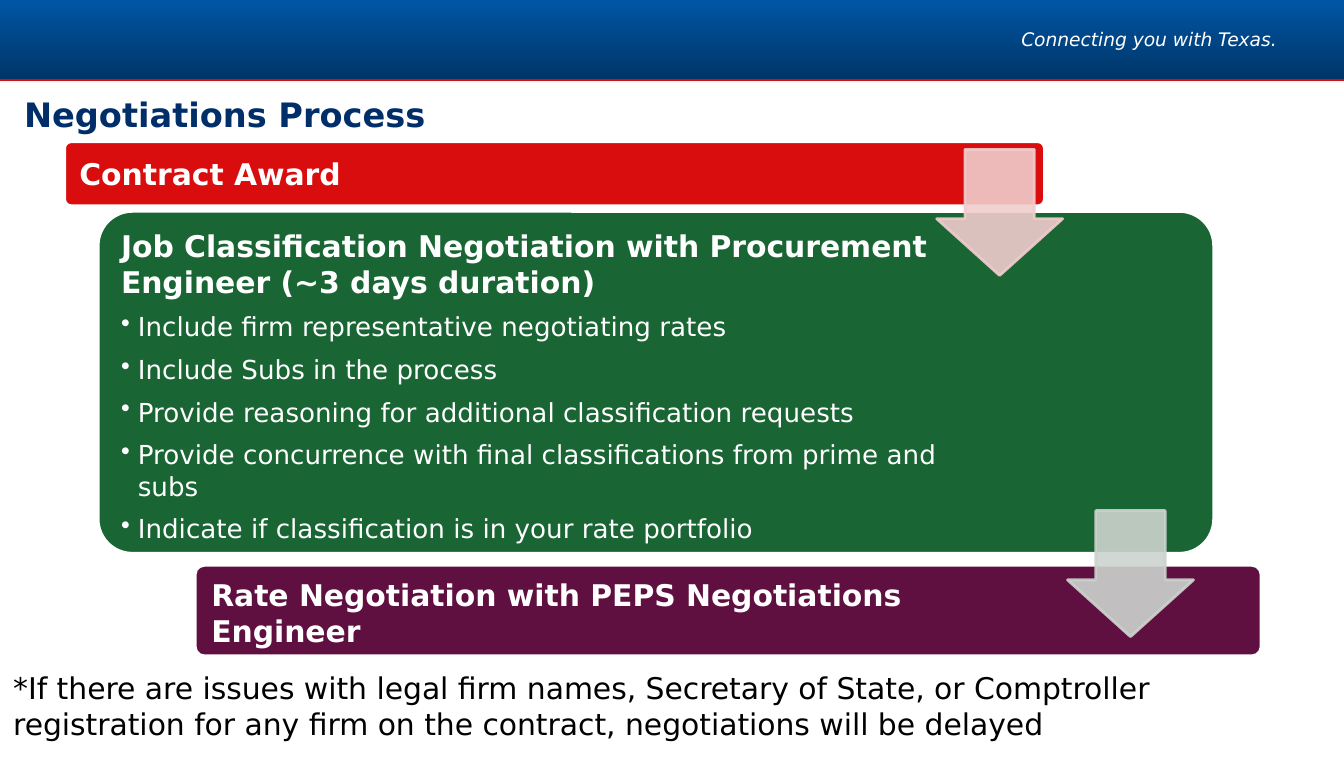
from dataclasses import dataclass

from pptx import Presentation
from pptx.dml.color import RGBColor
from pptx.enum.shapes import MSO_CONNECTOR, MSO_SHAPE
from pptx.enum.text import MSO_ANCHOR, PP_ALIGN
from pptx.oxml.ns import qn
from pptx.oxml.xmlchemy import OxmlElement
from pptx.util import Pt

RECT, ROUND, DOWN = MSO_SHAPE.RECTANGLE, MSO_SHAPE.ROUNDED_RECTANGLE, MSO_SHAPE.DOWN_ARROW
TOP, MIDDLE = MSO_ANCHOR.TOP, MSO_ANCHOR.MIDDLE
LEFT, RIGHT = PP_ALIGN.LEFT, PP_ALIGN.RIGHT
STRAIGHT = MSO_CONNECTOR.STRAIGHT

FONT = "DejaVu Sans"
HEX = {
    "white": "FFFFFF", "black": "000000", "navy": "002E69",
    "sky": "0057A8", "deep": "003567", "red": "D90D0D",
    "green": "196533", "plum": "5F0F40", "pink": "F1CCCC", "gray": "CCD3CE",
}
WIDTH, HEIGHT = 720, 405.36
CURVE = 0.1  # corner radius of a step, as a share of its height
INNER = 0.29 * CURVE  # extra text inset that the rounded corners cause
ARROW = 67.5


@dataclass
class Step:
    box: tuple
    color: str
    inset: tuple
    head: str
    items: tuple = ()
    anchor: int = MIDDLE


@dataclass
class Arrow:
    left: float
    top: float
    color: str


@dataclass
class Label:
    box: tuple
    text: str
    size: float
    color: str
    bold: bool = False
    italic: bool = False
    align: int = LEFT
    anchor: int = TOP
    inset: tuple = (7.2, 3.6, 7.2, 3.6)
    wrap: bool = True
    space: float = 1


STEPS = [
    Step((34.6, 75.9, 524.9, 34.3), "red", (7.9, 7.9, 107.3, 7.9), "Contract Award"),
    Step((52.6, 113.2, 597.6, 183.1), "green", (12.2, 8.7, 134.6, 8.7),
         "Job Classification Negotiation with Procurement Engineer (~3 days duration)",
         ("Include firm representative negotiating rates",
          "Include Subs in the process",
          "Provide reasoning for additional classification requests",
          "Provide concurrence with final classifications from prime and subs",
          "Indicate if classification is in your rate portfolio"), TOP),
    Step((104.6, 302.7, 571, 48.5), "plum", (8.6, 8.6, 125.3, 6.5),
         "Rate Negotiation with PEPS Negotiations Engineer"),
]
ARROWS = [Arrow(501.8, 80, "pink"), Arrow(571.9, 273.4, "gray")]
LABELS = [
    Label((516.2, 0, 167.8, 43.2), "Connecting you with Texas.", 10, "white",
          italic=True, align=RIGHT, anchor=MIDDLE, inset=(0, 0, 0, 0),
          wrap=False, space=0.9),
    Label((5.8, 46.8, 361.4, 28.8), "Negotiations Process", 18, "navy", bold=True),
    Label((0, 355, 669.6, 65.5),
          "*If there are issues with legal firm names, Secretary of State, or Comptroller "
          "registration for any firm on the contract, negotiations will be delayed",
          16, "black"),
]


def rgb(name: str) -> RGBColor:
    return RGBColor.from_string(HEX[name])


def style(par, size: float, color: str, bold=False, italic=False) -> None:
    for run in par.runs:
        font = run.font
        font.name, font.size = FONT, Pt(size)
        font.bold, font.italic = bold, italic
        font.color.rgb = rgb(color)


def frame(shape, inset: tuple, anchor: int, wrap=True):
    """Set insets, anchor and wrap; give back the text frame."""
    text = shape.text_frame
    (text.margin_left, text.margin_top,
     text.margin_right, text.margin_bottom) = (Pt(side) for side in inset)
    text.vertical_anchor, text.word_wrap = anchor, wrap
    return text


def bullet(par) -> None:
    props = par._p.get_or_add_pPr()
    props.set("marL", str(Pt(9)))
    props.set("indent", str(-Pt(9)))
    mark = OxmlElement("a:buChar")
    mark.set("char", "•")
    props.append(mark)


def add_shape(slide, kind: int, box: tuple, fill: str, line: str):
    shape = slide.shapes.add_shape(kind, *map(Pt, box))
    shape.shadow.inherit = False
    shape.fill.solid()
    shape.fill.fore_color.rgb = rgb(fill)
    shape.line.color.rgb = rgb(line)
    shape.line.width = Pt(1.5)
    return shape


def add_band(slide) -> None:
    """Draw the gradient header and the red rule below it."""
    band = slide.shapes.add_shape(RECT, Pt(-0.7), Pt(-2), Pt(721.4), Pt(44.9))
    band.shadow.inherit = False
    band.line.fill.background()
    band.fill.gradient()
    band.fill.gradient_angle = 270
    for stop, name in zip(band.fill.gradient_stops, ("sky", "deep")):
        stop.color.rgb = rgb(name)
    rule = slide.shapes.add_connector(STRAIGHT, Pt(-0.7), Pt(42.9), Pt(720.7), Pt(42.9))
    rule.line.color.rgb = rgb("red")
    rule.line.width = Pt(1)
    rule._element.spPr.append(OxmlElement("a:effectLst"))


def add_step(slide, step: Step) -> None:
    shape = add_shape(slide, ROUND, step.box, step.color, "white")
    shape.adjustments[0] = CURVE
    extra = INNER * step.box[3]
    text = frame(shape, tuple(side - extra for side in step.inset), step.anchor)
    text.text = "\n".join((step.head, *step.items))
    for rank, par in enumerate(text.paragraphs):
        if rank:
            bullet(par)
        par.alignment, par.space_after = LEFT, Pt(6)
        style(par, 14 if rank else 16, "white", bold=not rank)


def add_arrow(slide, arrow: Arrow) -> None:
    box = (arrow.left, arrow.top, ARROW, ARROW)
    shape = add_shape(slide, DOWN, box, arrow.color, arrow.color)
    shape.adjustments[0], shape.adjustments[1] = 0.55, 0.45
    for color in shape._element.spPr.iter(qn("a:srgbClr")):
        alpha = OxmlElement("a:alpha")
        alpha.set("val", "90000")
        color.append(alpha)


def add_label(slide, label: Label) -> None:
    box = slide.shapes.add_textbox(*map(Pt, label.box))
    text = frame(box, label.inset, label.anchor, label.wrap)
    text.text = label.text
    par = text.paragraphs[0]
    par.alignment, par.line_spacing = label.align, label.space
    style(par, label.size, label.color, label.bold, label.italic)


def main() -> None:
    deck = Presentation()
    deck.slide_width, deck.slide_height = Pt(WIDTH), Pt(HEIGHT)
    slide = deck.slides.add_slide(deck.slide_layouts[6])
    add_band(slide)
    for step in STEPS:
        add_step(slide, step)
    for arrow in ARROWS:
        add_arrow(slide, arrow)
    for label in LABELS:
        add_label(slide, label)
    deck.save("out.pptx")


if __name__ == "__main__":
    main()
